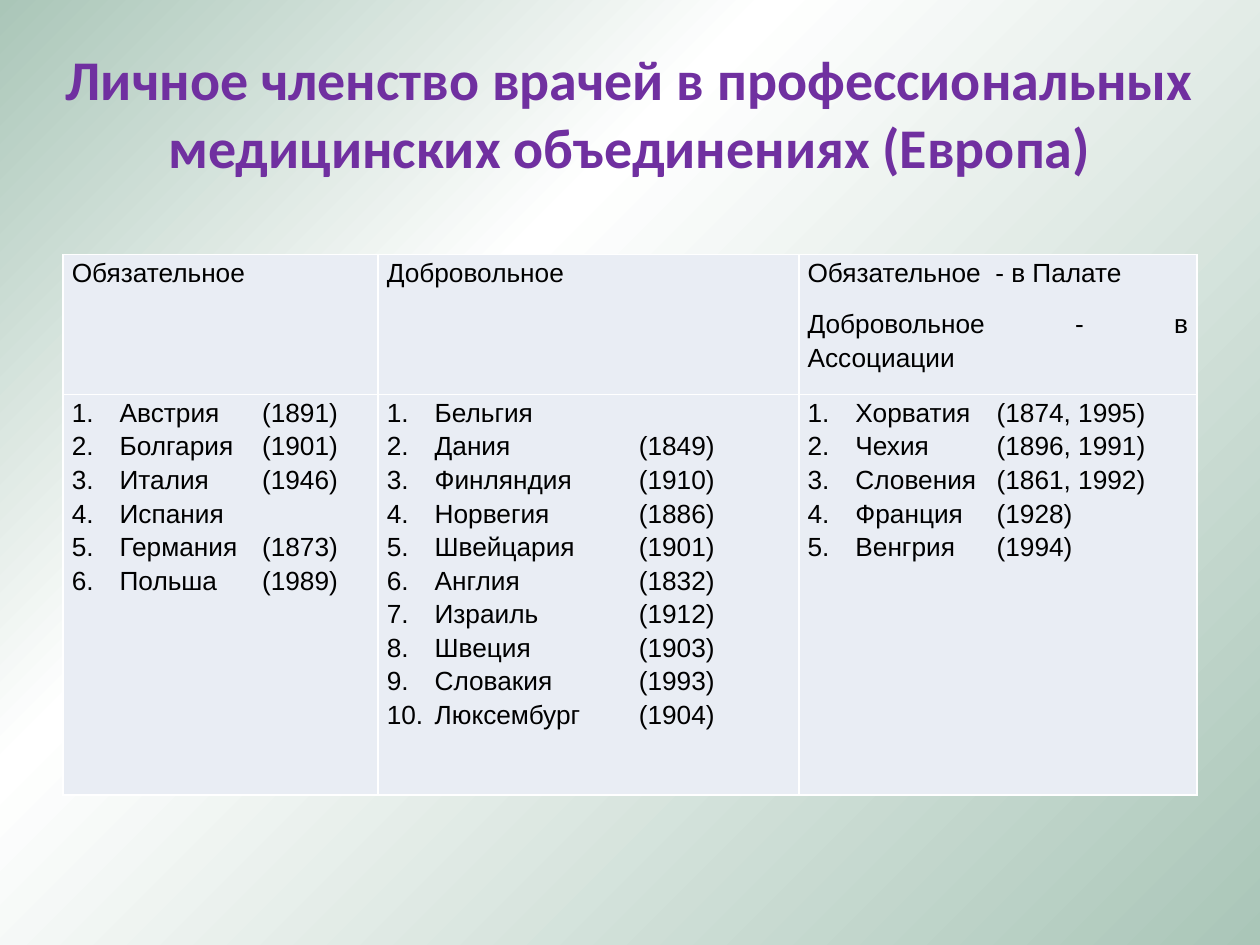
from copy import deepcopy

from lxml.etree import SubElement
from pptx import Presentation
from pptx.dml.color import RGBColor
from pptx.enum.text import MSO_ANCHOR as Anchor, PP_ALIGN as Align
from pptx.oxml import parse_xml
from pptx.oxml.ns import nsdecls, qn
from pptx.util import Inches, Pt

SAGE = RGBColor(0xAA, 0xC6, 0xB8)
WHITE = RGBColor(0xFF, 0xFF, 0xFF)
PURPLE = RGBColor(0x70, 0x30, 0xA0)
BLACK = RGBColor(0x00, 0x00, 0x00)
PALE = RGBColor(0xE9, 0xED, 0xF4)

HEADING = "Личное членство врачей в профессиональных медицинских объединениях (Европа)"
MEMBERSHIPS = [
    (2.5, 1.51, ["Обязательное"],
     [("Австрия", "1891"), ("Болгария", "1901"), ("Италия", "1946"),
      ("Испания", ""), ("Германия", "1873"), ("Польша", "1989")]),
    (3.34, 2.0, ["Добровольное"],
     [("Бельгия", ""), ("Дания", "1849"), ("Финляндия", "1910"),
      ("Норвегия", "1886"), ("Швейцария", "1901"), ("Англия", "1832"),
      ("Израиль", "1912"), ("Швеция", "1903"), ("Словакия", "1993"),
      ("Люксембург", "1904")]),
    (3.16, 1.5, ["Обязательное  - в Палате", "Добровольное  -  в Ассоциации"],
     [("Хорватия", "1874, 1995"), ("Чехия", "1896, 1991"),
      ("Словения", "1861, 1992"), ("Франция", "1928"), ("Венгрия", "1994")]),
]
ROW_HEIGHTS = [1.11, 3.18]


def paint_background(slide):
    """Fill the slide with a diagonal sage and white gradient."""
    fill = slide.background.fill
    fill.gradient()
    fill.gradient_angle = 135
    first, last = fill.gradient_stops
    first.color.rgb = last.color.rgb = SAGE
    stops = slide.background._cSld.find(".//" + qn("a:gsLst"))
    middle = deepcopy(stops[0])
    middle.set("pos", "65000")
    middle[0].set("val", str(WHITE))
    stops.insert(1, middle)


def write_title(title, left, top, width, height):
    """Place and format the title."""
    title.left, title.top, title.width, title.height = map(
        Inches, (left, top, width, height))
    frame = title.text_frame
    frame.text = HEADING
    frame.vertical_anchor = Anchor.MIDDLE
    frame.margin_bottom = Inches(0.12)
    heading = frame.paragraphs[0]
    heading.alignment = Align.CENTER
    font = heading.font
    font.name, font.size, font.bold = "Calibri", Pt(32), True
    font.color.rgb = PURPLE


def style_cell(cell):
    """Give a cell its margins, fill and white borders."""
    cell.margin_left = cell.margin_right = Inches(0.07)
    cell.margin_top = cell.margin_bottom = 0
    cell.fill.solid()
    cell.fill.fore_color.rgb = PALE
    properties = cell._tc.get_or_add_tcPr()
    for place, side in enumerate("LRTB"):
        properties.insert(place, parse_xml(
            f'<a:ln{side} {nsdecls("a")} w="{Pt(1)}"><a:solidFill>'
            f'<a:srgbClr val="{WHITE}"/></a:solidFill></a:ln{side}>'))


def write_lines(cell, lines, space_after=0):
    """Write justified paragraphs into a cell and return them."""
    cell.text = "\n".join(lines)
    for line in cell.text_frame.paragraphs:
        line.alignment = Align.JUSTIFY
        line.line_spacing = 1.15
        line.space_after = Pt(space_after)
        line.font.name, line.font.size = "Arial", Pt(15)
        line.font.color.rgb = BLACK
    return cell.text_frame.paragraphs


def number_country(line, year_stop):
    """Number a line and align its year at a tab stop."""
    properties = line._p.get_or_add_pPr()
    properties.set("marL", str(Inches(0.38)))
    properties.set("indent", str(-Inches(0.38)))
    numbering = parse_xml(f'<a:buAutoNum {nsdecls("a")} type="arabicPeriod"/>')
    tabs = parse_xml(f'<a:tabLst {nsdecls("a")}/>')
    SubElement(tabs, qn("a:tab"), pos=str(Inches(year_stop)), algn="l")
    font_defaults = properties.find(qn("a:defRPr"))
    for element in (numbering, tabs):
        font_defaults.addprevious(element)


def build_memberships(slide, left, top, width):
    """Build the table of countries by kind of membership."""
    table = slide.shapes.add_table(
        len(ROW_HEIGHTS), len(MEMBERSHIPS), Inches(left), Inches(top),
        Inches(width), Inches(sum(ROW_HEIGHTS))).table
    table.first_row = table.horz_banding = False
    for row, height in zip(table.rows, ROW_HEIGHTS):
        row.height = Inches(height)
    for index, (share, year_stop, kinds, countries) in enumerate(MEMBERSHIPS):
        table.columns[index].width = Inches(share)
        write_lines(table.cell(0, index), kinds, 10)
        entries = [f"{country}\t({years})" if years else country
                   for country, years in countries]
        for line in write_lines(table.cell(1, index), entries):
            number_country(line, year_stop)
    for cell in table.iter_cells():
        style_cell(cell)


def main():
    """Create the slide and save it."""
    deck = Presentation()
    deck.slide_width, deck.slide_height = Inches(10), Inches(7.5)
    slide = deck.slides.add_slide(deck.slide_layouts[5])
    paint_background(slide)
    write_title(slide.shapes.title, 0, 0.3, 10, 1.25)
    build_memberships(slide, 0.5, 2.02, 9)
    deck.save("out.pptx")


if __name__ == "__main__":
    main()
